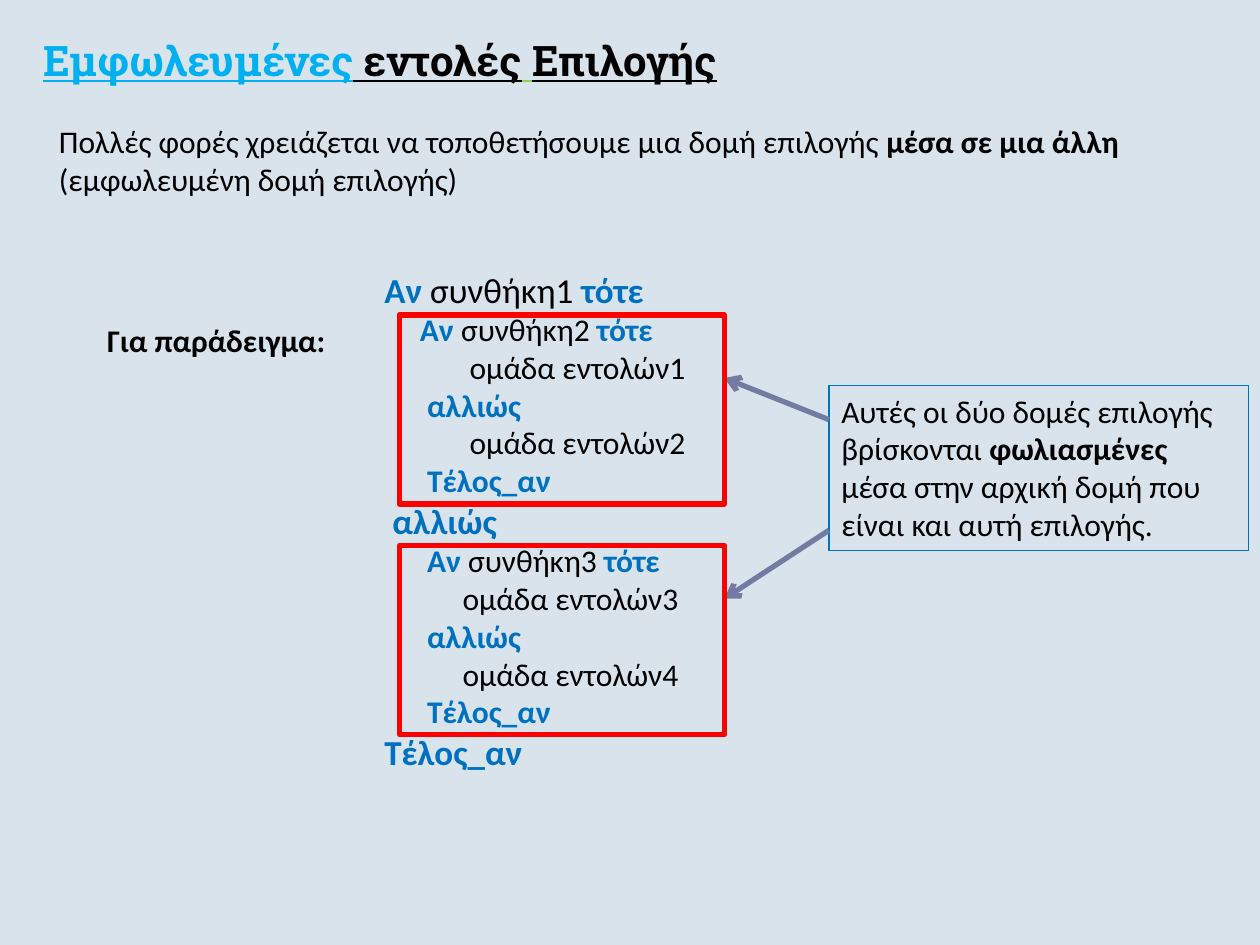
import pptx
import pptx.util
import pptx.dml.color
import pptx.enum.shapes
import pptx.enum.text
import pptx.oxml.ns
from lxml import etree

Cm, Pt = pptx.util.Cm, pptx.util.Pt
SHAPE = pptx.enum.shapes.MSO_SHAPE
ANCHOR = pptx.enum.text.MSO_ANCHOR

BLACK, BLUE, RED, SLATE = "000000", "0070C0", "FF0000", "727CA3"

# A run is (text, colour, bold); a paragraph is (size, runs).
TITLE = [(24, [("Εμφωλευμένες", "00B0F0", True), (" εντολές", BLACK, True),
               (" ", "92D050", True), ("Επιλογής", BLACK, True)])]
INTRO = [(18, [("Πολλές φορές χρειάζεται να τοποθετήσουμε µια δομή επιλογής ", BLACK, False),
               ("μέσα σε µια άλλη ", BLACK, True),
               ("(εµφωλευµένη δοµή επιλογής)", BLACK, False)])]
EXAMPLE = [(18, [("Για παράδειγμα:", BLACK, True)])]
NOTE = [(18, [("Αυτές οι δύο δομές επιλογής βρίσκονται ", BLACK, False),
              ("φωλιασμένες ", BLACK, True),
              ("μέσα στην αρχική δομή που είναι και αυτή επιλογής.", BLACK, False)])]

# Pseudocode lines: size, then keywords (blue) and plain parts by turns
CODE = [
    (20, "Αν", " συνθήκη1 ", "τότε"),
    (18, "     Αν ", "συνθήκη2 ", "τότε"),
    (18, "", "            οµάδα εντολών1"),
    (18, "      αλλιώς"),
    (18, "", "            οµάδα εντολών2"),
    (18, "      Τέλος_αν"),
    (20, " αλλιώς"),
    (18, "      Αν ", "συνθήκη3 ", "τότε"),
    (18, "", "           οµάδα εντολών3"),
    (18, "      αλλιώς"),
    (18, "", "           οµάδα εντολών4"),
    (18, "      Τέλος_αν"),
    (20, "Τέλος_αν"),
]

# Lengths in cm
BOX_LEFT, BOX_WIDTH, BOX_HEIGHT = 8.05, 6.55, 3.81
BOX_TOPS = [6.35, 11.0]
NOTE_LEFT = 16.71
ARROWS = [(8.46, 7.62), (10.69, 12.07)]  # y at the note, y at the nested block


def rgb(value):
    return pptx.dml.color.RGBColor.from_string(value)


def write(sp, paragraphs, font="Calibri", underline=None, wrap=True):
    tf = sp.text_frame
    tf.word_wrap = wrap
    for i, (size, runs) in enumerate(paragraphs):
        p = tf.paragraphs[0] if i == 0 else tf.add_paragraph()
        p.alignment = pptx.enum.text.PP_ALIGN.LEFT
        for text, color, bold in runs:
            r = p.add_run()
            r.text = text
            r.font.name, r.font.size = font, Pt(size)
            r.font.bold, r.font.underline = bold, underline
            r.font.color.rgb = rgb(color)
    return tf


def add_text(s, at, paragraphs, **options):
    return write(s.shapes.add_textbox(*map(Cm, at)), paragraphs, **options)


def add_frame(s, at, color, width):
    """Add an unfilled rectangle."""
    sp = s.shapes.add_shape(SHAPE.RECTANGLE, *map(Cm, at))
    sp.shadow.inherit = False
    sp.fill.background()
    sp.line.color.rgb = rgb(color)
    sp.line.width = Pt(width)
    return sp


def add_arrow(s, x1, y1, x2, y2):
    line = s.shapes.add_connector(pptx.enum.shapes.MSO_CONNECTOR.STRAIGHT,
                                  *map(Cm, (x1, y1, x2, y2)))
    line.line.color.rgb = rgb(SLATE)
    line.line.width = Pt(3)
    qn = pptx.oxml.ns.qn
    etree.SubElement(line.line._get_or_add_ln(), qn("a:tailEnd"), type="arrow")
    etree.SubElement(line._element.spPr, qn("a:effectLst"))


def code_paragraphs():
    for size, *parts in CODE:
        yield size, [(text, BLACK if i % 2 else BLUE, i % 2 == 0)
                     for i, text in enumerate(parts) if text]


def main():
    prs = pptx.Presentation()
    prs.slide_width, prs.slide_height = Cm(25.4), Cm(19.05)
    s = prs.slides.add_slide(prs.slide_layouts[6])
    s.background.fill.solid()
    s.background.fill.fore_color.rgb = rgb("D9E3EB")

    tf = add_text(s, (0.87, 0.64, 20.09, 1.07), TITLE, font="Roboto Slab", underline=True)
    tf.margin_left = tf.margin_right = tf.margin_top = tf.margin_bottom = 0
    tf.vertical_anchor = ANCHOR.BOTTOM

    add_text(s, (0.94, 2.34, 23.06, 1.8), INTRO)
    add_text(s, (1.91, 6.35, 4.95, 1.02), EXAMPLE, wrap=False)
    add_text(s, (7.5, 5.28, 7.95, 10.44), code_paragraphs())

    note = add_frame(s, (NOTE_LEFT, 7.77, 8.46, 3.33), BLUE, 0.75)
    write(note, NOTE).vertical_anchor = ANCHOR.TOP
    for y_note, y_block in ARROWS:
        add_arrow(s, NOTE_LEFT, y_note, BOX_LEFT + BOX_WIDTH, y_block)
    for top in BOX_TOPS:
        add_frame(s, (BOX_LEFT, top, BOX_WIDTH, BOX_HEIGHT), RED, 3)

    prs.save("out.pptx")


if __name__ == "__main__":
    main()
